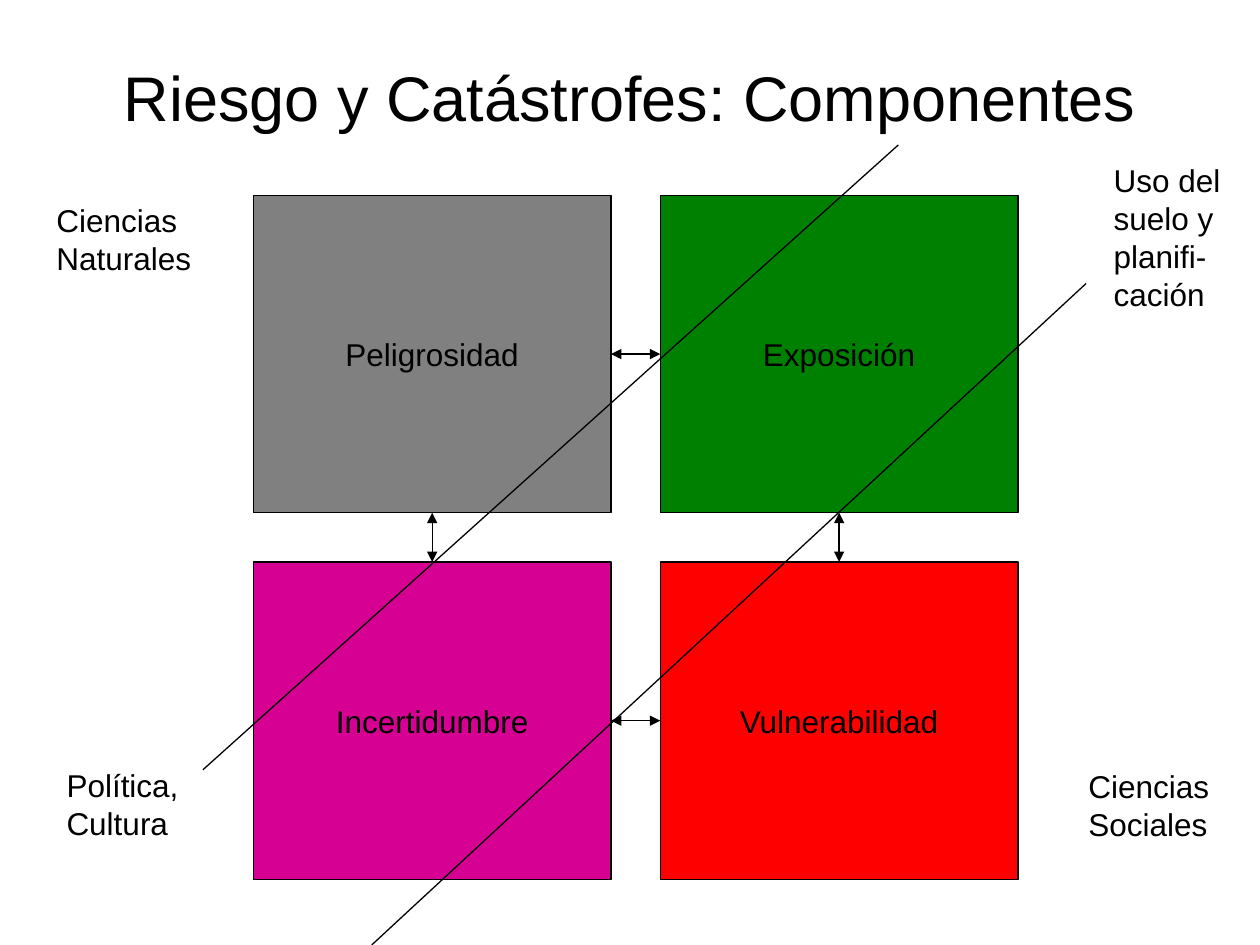
from lxml import etree
from pptx import Presentation
from pptx.dml.color import RGBColor
from pptx.enum.shapes import MSO_CONNECTOR as Link, MSO_SHAPE as Shape
from pptx.enum.text import MSO_ANCHOR as Anchor, MSO_AUTO_SIZE as Fit, PP_ALIGN as Align
from pptx.oxml.ns import qn
from pptx.util import Inches, Pt

BLACK = RGBColor(0x00, 0x00, 0x00)
GRAY = RGBColor(0x80, 0x80, 0x80)
GREEN = RGBColor(0x00, 0x80, 0x00)
PINK = RGBColor(0xD6, 0x00, 0x93)
RED = RGBColor(0xFF, 0x00, 0x00)


def write(shape, text, size=18, align=Align.LEFT):
    para = shape.text_frame.paragraphs[0]
    para.text = text
    para.alignment = align
    style = {"name": "Arial", "size": Pt(size)}
    for key, value in style.items():
        setattr(para.font, key, value)
    para.font.color.rgb = BLACK


def draw_line(x1, y1, x2, y2):
    line = slide.shapes.add_connector(
        Link.STRAIGHT, Inches(x1), Inches(y1), Inches(x2), Inches(y2))
    line.line.color.rgb = BLACK
    line.line.width = Pt(0.75)
    etree.SubElement(line._element.spPr, qn("a:effectLst"))
    return line


deck = Presentation()
deck.slide_width, deck.slide_height = Inches(10), Inches(7.5)
slide = deck.slides.add_slide(deck.slide_layouts[6])

title = slide.shapes.add_textbox(Inches(0.5), Inches(0.3), Inches(9), Inches(0.93))
title.text_frame.word_wrap = True
title.text_frame.vertical_anchor = Anchor.MIDDLE
write(title, "Riesgo y Catástrofes: Componentes", 36, Align.CENTER)

# Four components in a two by two grid
LEFT, TOP, WIDTH, HEIGHT = 2.01, 1.55, 2.84, 2.52
STEP_X, STEP_Y = 3.23, 2.91
parts = [
    ("Peligrosidad", GRAY, 0, 0),
    ("Exposición", GREEN, 1, 0),
    ("Incertidumbre", PINK, 0, 1),
    ("Vulnerabilidad", RED, 1, 1),
]
boxes = []
for text, color, col, row in parts:
    box = slide.shapes.add_shape(
        Shape.RECTANGLE, Inches(LEFT + col * STEP_X), Inches(TOP + row * STEP_Y),
        Inches(WIDTH), Inches(HEIGHT))
    box.shadow.inherit = False
    box.fill.solid()
    box.fill.fore_color.rgb = color
    box.line.color.rgb = BLACK
    box.line.width = Pt(0.75)
    box.text_frame.word_wrap = False
    box.text_frame.vertical_anchor = Anchor.MIDDLE
    write(box, text, align=Align.CENTER)
    boxes.append(box)

# Double arrows between neighbours: box, side, box, side
for start, out, end, into in [(0, 3, 1, 1), (0, 2, 2, 0), (1, 2, 3, 0), (2, 3, 3, 1)]:
    arrow = draw_line(0, 0, 1, 1)
    arrow.begin_connect(boxes[start], out)
    arrow.end_connect(boxes[end], into)
    ln = arrow.line._get_or_add_ln()
    for tag in ("a:headEnd", "a:tailEnd"):
        etree.SubElement(ln, qn(tag), type="triangle")

# Diagonals that split the fields of study
draw_line(1.61, 6.11, 7.13, 1.15)
draw_line(2.95, 7.5, 8.62, 2.25)

fields = [
    ("Ciencias Naturales", 0.35, 1.55, 1.34, 0.7),
    ("Ciencias\vSociales", 8.54, 6.04, 1.26, 0.7),
    ("Uso del suelo y planifi-cación", 8.74, 1.23, 1.26, 1.3),
    ("Política, Cultura", 0.43, 6.03, 1.26, 0.7),
]
for text, *place in fields:
    label = slide.shapes.add_textbox(*map(Inches, place))
    label.text_frame.word_wrap = True
    label.text_frame.auto_size = Fit.SHAPE_TO_FIT_TEXT
    write(label, text)

deck.save("out.pptx")
